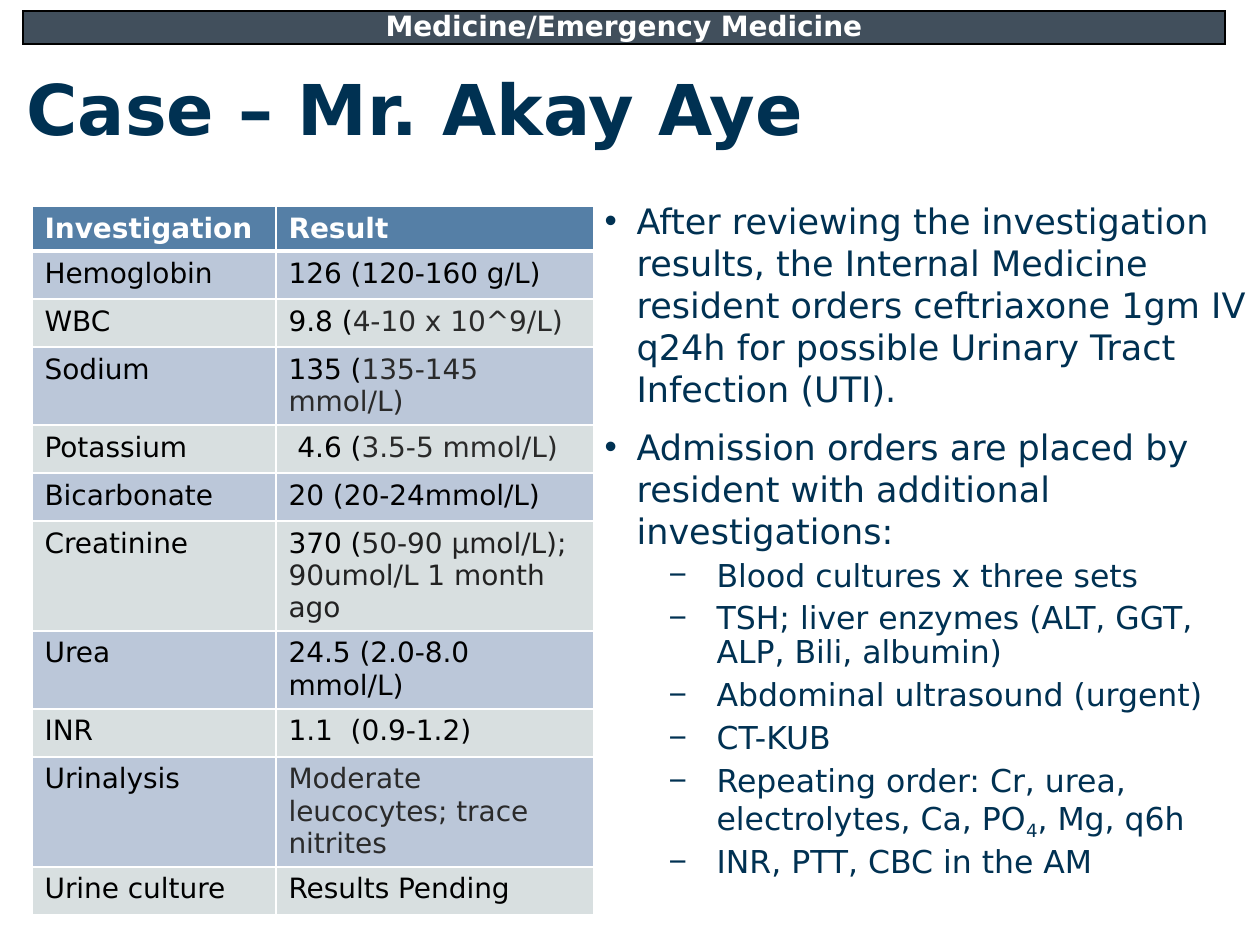
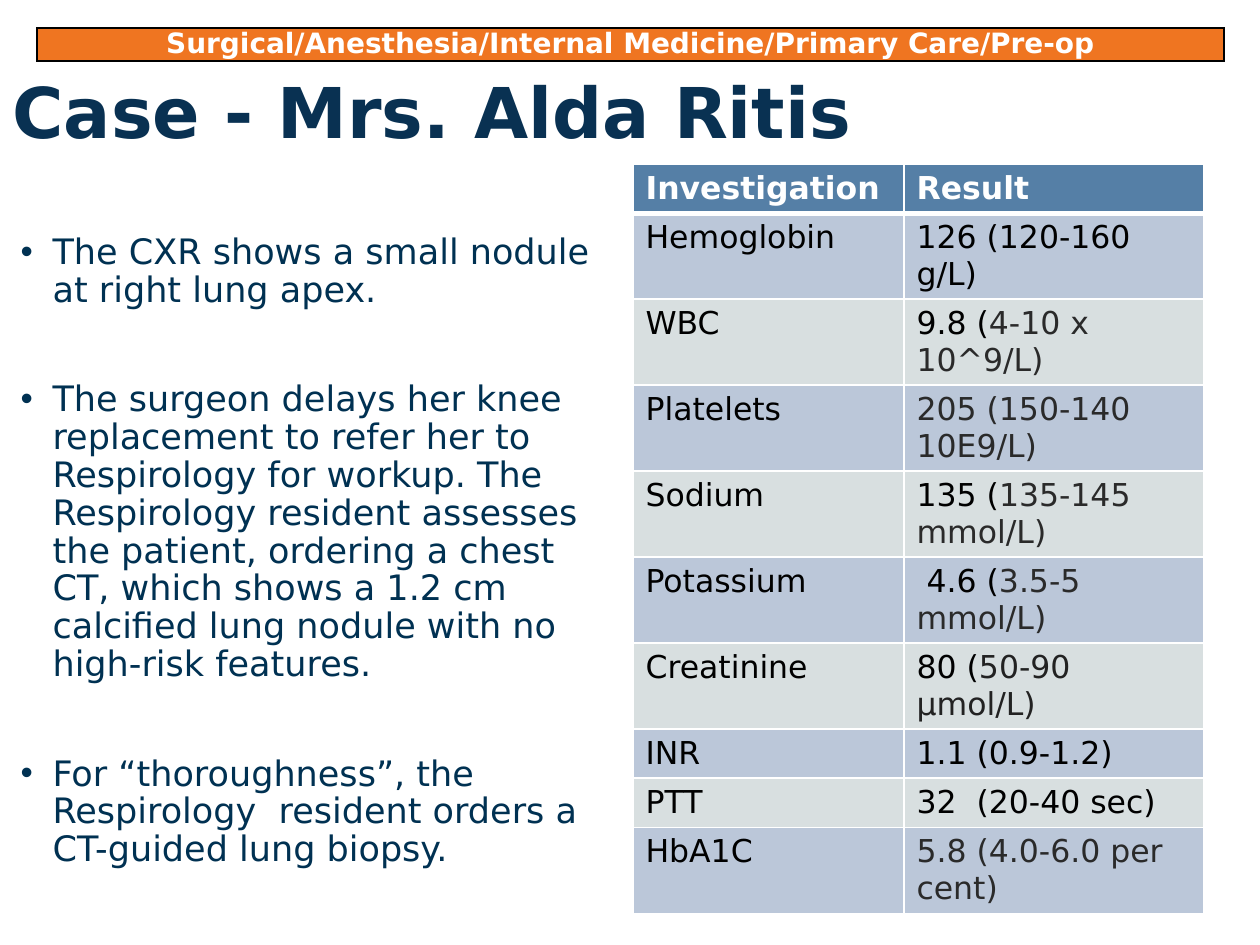
"""Build two clinical case slides with results tables."""
from lxml.etree import SubElement
from pptx import Presentation
from pptx.dml.color import RGBColor
from pptx.enum.text import MSO_ANCHOR, MSO_AUTO_SIZE, PP_ALIGN
from pptx.oxml.ns import qn
from pptx.util import Emu, Pt

FONT = "DejaVu Sans"
NAVY = RGBColor(0x00, 0x31, 0x52)
DEEP = RGBColor(0x09, 0x31, 0x52)
BLUE = RGBColor(0x55, 0x7F, 0xA6)
PALE = RGBColor(0xBB, 0xC7, 0xD9)
MIST = RGBColor(0xD8, 0xDF, 0xE0)
SLATE = RGBColor(0x41, 0x4F, 0x5C)
ORANGE = RGBColor(0xEF, 0x75, 0x21)
WHITE = RGBColor(0xFF, 0xFF, 0xFF)
BLACK = RGBColor(0x00, 0x00, 0x00)
GREY = RGBColor(0x2A, 0x2A, 0x2A)
INK = RGBColor(0x22, 0x22, 0x22)


def px(n):
    return Emu(round(n * 914400 / 126))


def put(para, text, size, color, bold=False):
    run = para.add_run()
    run.text = text
    run.font.name = FONT
    run.font.size = Pt(size)
    run.font.bold = bold
    run.font.color.rgb = color
    return run


# fmt: off
LEVELS = {
    "main": dict(level=1, bullet="•", left=94, hang=32, size=20, space=Pt(24), before=9),
    "sub": dict(level=2, bullet="−", left=174, hang=48, size=18, space=0.9, before=5),
    "wide": dict(level=0, bullet="•", left=32, hang=32, size=20, space=0.9, before=41),
}

CASES = [
    dict(
        title="Case – Mr. Akay Aye", tint=NAVY, head=(14, 21, 1086, 183),
        body=(530, 193, 746, 752),
        points=[
            ("main", "After reviewing the investigation results, the Internal Medicine resident orders "
                     "ceftriaxone 1gm IV q24h for possible Urinary Tract Infection (UTI)."),
            ("main", "Admission orders are placed by resident with additional investigations:"),
            ("sub", "Blood cultures x three sets"),
            ("sub", "TSH; liver enzymes (ALT, GGT, ALP, Bili, albumin)"),
            ("sub", "Abdominal ultrasound (urgent)"),
            ("sub", "CT-KUB"),
            ("sub", "Repeating order: Cr, urea, electrolytes, Ca, PO|4|, Mg, q6h"),
            ("sub", "INR, PTT, CBC in the AM"),
        ],
        spot=(32, 206), cols=(244, 318), size=16,
        rows=[
            (43, "Investigation", "Result"),
            (48, "Hemoglobin", "126 (120-160 g/L)"),
            (48, "WBC", "9.8 (|4-10 x 10^9/L)"),
            (78, "Sodium", "135 (|135-145 mmol/L)"),
            (48, "Potassium", " 4.6 (|3.5-5 mmol/L)"),
            (48, "Bicarbonate", "20 (20-24mmol/L)"),
            (110, "Creatinine", "370 (|50-90 µmol/L); 90umol/L 1 month ago"),
            (78, "Urea", "24.5 (2.0-8.0 mmol/L)"),
            (48, "INR", "1.1  (0.9-1.2)"),
            (110, "Urinalysis", "|Moderate leucocytes; trace nitrites"),
            (48, "Urine culture", "Results Pending"),
        ],
        band="Medicine/Emergency Medicine", shade=SLATE, strip=(23, 11, 1202),
    ),
    dict(
        title="Case - Mrs. Alda Ritis", tint=DEEP, head=(0, 24, 1086, 183),
        body=(8, 228, 614, 621),
        points=[
            ("wide", "The CXR shows a small nodule at right lung apex."),
            ("wide", "The surgeon delays her knee replacement to refer her to Respirology for workup. "
                     "The Respirology resident assesses the patient, ordering a chest CT, which shows "
                     "a 1.2 cm calcified lung nodule with no high-risk features."),
            ("wide", "For “thoroughness”, the Respirology  resident orders a CT-guided lung biopsy."),
        ],
        spot=(633, 164), cols=(271, 300), size=18,
        rows=[
            (49, "Investigation", "Result"),
            (86, "Hemoglobin", "126 (120-160 g/L)"),
            (86, "WBC", "9.8 (|4-10 x 10^9/L)"),
            (86, "Platelets", "|205 (150-140 10E9/L)"),
            (86, "Sodium", "135 (|135-145 mmol/L)"),
            (86, "Potassium", " 4.6 (|3.5-5 mmol/L)"),
            (86, "Creatinine", "80 (|50-90 µmol/L)"),
            (49, "INR", "1.1 (0.9-1.2)"),
            (49, "PTT", "32  (20-40 sec)"),
            (86, "HbA1C", "|5.8 (4.0-6.0 per cent)"),
        ],
        band="Surgical/Anesthesia/Internal Medicine/Primary Care/Pre-op", shade=ORANGE,
        strip=(37, 28, 1187),
    ),
]
# fmt: on

deck = Presentation()
deck.slide_width, deck.slide_height = px(1260), px(945)

for case in CASES:
    slide = deck.slides.add_slide(deck.slide_layouts[1])
    title, body = slide.shapes.title, slide.placeholders[1]
    for shape, box in ((title, case["head"]), (body, case["body"])):
        shape.left, shape.top, shape.width, shape.height = map(px, box)
        shape.text_frame.word_wrap = True
        shape.text_frame.auto_size = MSO_AUTO_SIZE.NONE
    title.text_frame.vertical_anchor = MSO_ANCHOR.MIDDLE
    para = title.text_frame.paragraphs[0]
    para.alignment = PP_ALIGN.LEFT
    para.line_spacing = 0.9
    put(para, case["title"], 40, case["tint"], True)

    for num, (kind, text) in enumerate(case["points"]):
        look = LEVELS[kind]
        para = body.text_frame.add_paragraph() if num else body.text_frame.paragraphs[0]
        props = para._p.get_or_add_pPr()
        SubElement(props, qn("a:buChar"), char=look["bullet"])
        props.set("marL", str(px(look["left"])))
        props.set("indent", str(-px(look["hang"])))
        para.level = look["level"]
        para.line_spacing = look["space"]
        para.space_before = Pt(look["before"] if num else 0)
        for part, piece in enumerate(text.split("|")):
            run = put(para, piece, look["size"], NAVY)
            if part == 1:
                run._r.get_or_add_rPr().set("baseline", "-25000")

    left, top, wide = case["strip"]
    grids = [
        (case["spot"], case["cols"], case["rows"], case["size"], BLUE, WHITE),
        ((left, top), (wide,), [(33, case["band"])], 16, case["shade"], BLACK),
    ]
    for (left, top), cols, rows, size, shade, edge in grids:
        high = sum(row[0] for row in rows)
        frame = slide.shapes.add_table(
            len(rows), len(cols), px(left), px(top), px(sum(cols)), px(high))
        table = frame.table
        for col, wide in zip(table.columns, cols):
            col.width = px(wide)
        for r, (tall, *texts) in enumerate(rows):
            table.rows[r].height = px(tall)
            for c, text in enumerate(texts):
                cell = table.cell(r, c)
                thick = {"lnB": 0, "lnT": 1}
                for side in ("lnL", "lnR", "lnT", "lnB"):
                    heavy = len(rows) > 1 and thick.get(side) == r
                    line = SubElement(
                        cell._tc.get_or_add_tcPr(), qn("a:" + side), w=str(Pt(3 if heavy else 1)))
                    fill = SubElement(line, qn("a:solidFill"))
                    SubElement(fill, qn("a:srgbClr"), val=str(edge))
                cell.fill.solid()
                cell.fill.fore_color.rgb = (MIST, PALE)[r % 2] if r else shade
                para = cell.text_frame.paragraphs[0]
                if edge == BLACK:
                    cell.margin_top = cell.margin_bottom = 0
                    cell.margin_left = cell.margin_right = px(9)
                    para.alignment = PP_ALIGN.CENTER
                plain, _, range_ = text.partition("|")
                if plain:
                    put(para, plain, size, BLACK if r else WHITE, r == 0)
                if range_:
                    put(para, range_, size, INK if "µ" in range_ else GREY)

deck.save("out.pptx")
